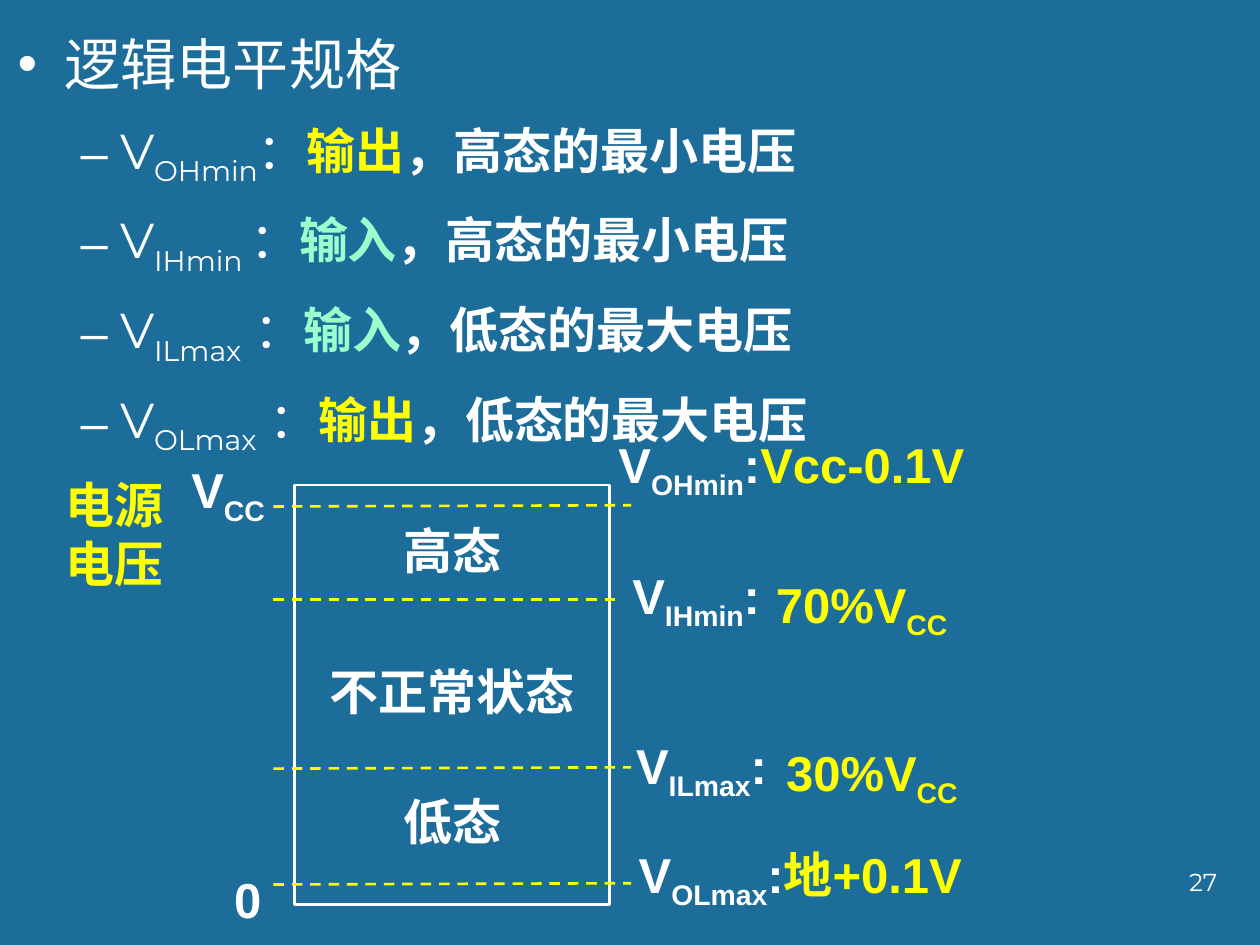
from typing import NamedTuple

from lxml.etree import SubElement
from pptx import Presentation
from pptx.dml.color import RGBColor
from pptx.enum.dml import MSO_LINE_DASH_STYLE as Dash
from pptx.enum.shapes import MSO_CONNECTOR as Connector, MSO_SHAPE as Shape
from pptx.enum.text import MSO_ANCHOR as Anchor, MSO_AUTO_SIZE as AutoSize, PP_ALIGN as Align
from pptx.oxml.ns import qn
from pptx.util import Inches, Pt

COLORS = {"blue": "1C6D9A", "white": "FFFFFF", "yellow": "FFFF00", "mint": "99FFCC"}
CJK_FONT = "Noto Sans CJK SC"


class Piece(NamedTuple):
    text: str
    color: str = "white"
    subscript: bool = False


class Level(NamedTuple):
    symbol: str
    colon: str
    direction: str
    color: str
    meaning: str


class Label(NamedTuple):
    left: float
    top: float
    width: float
    pieces: list[Piece]


class Threshold(NamedTuple):
    start_y: float
    end_x: float
    end_y: float


LEVELS = [
    Level("OHmin", "：", "输出", "yellow", "，高态的最小电压"),
    Level("IHmin ", "：", "输入", "mint", "，高态的最小电压"),
    Level("ILmax", " ：", "输入", "mint", "，低态的最大电压"),
    Level("OLmax", " ：", "输出", "yellow", "，低态的最大电压"),
]


def voltage(symbol: str, color: str = "white", prefix: str = "V") -> list[Piece]:
    return [Piece(prefix, color), Piece(symbol, color, True)]


LABELS = [
    Label(1.42, 3.6, 1.17, voltage("CC")),
    Label(1.76, 6.85, 0.5, [Piece("0")]),
    Label(4.81, 3.4, 3.78, voltage("OHmin") + [Piece(":"), Piece("Vcc-0.1V", "yellow")]),
    Label(4.92, 4.44, 1.32, voltage("IHmin") + [Piece(":")]),
    Label(6.06, 4.51, 2.33, voltage("CC", "yellow", "70%V")),
    Label(4.95, 5.79, 1.35, voltage("ILmax") + [Piece(":")]),
    Label(6.14, 5.84, 2.42, voltage("CC", "yellow", "30%V")),
    Label(4.97, 6.65, 3.21, voltage("OLmax") + [Piece(":"), Piece("地+0.1V", "yellow")]),
]

THRESHOLDS = [
    Threshold(4.02, 5.01, 4.01),
    Threshold(4.76, 4.92, 4.76),
    Threshold(6.1, 5.01, 6.09),
    Threshold(7.02, 5.01, 7.01),
]


def rgb(name: str) -> RGBColor:
    return RGBColor.from_string(COLORS[name])


def add_run(paragraph, piece: Piece, font: str, size: int = 28, bold: bool = True) -> None:
    run = paragraph.add_run()
    run.text = piece.text
    run.font.size = Pt(size)
    run.font.name = font
    run.font.bold = bold
    run.font.color.rgb = rgb(piece.color)
    properties = run.font._element
    SubElement(properties, qn("a:ea")).set("typeface", CJK_FONT)
    if piece.subscript:
        properties.set("baseline", "-25000")


def add_text_frame(slide, left: float, top: float, width: float, height: float):
    box = slide.shapes.add_textbox(Inches(left), Inches(top), Inches(width), Inches(height))
    box.text_frame.word_wrap = True
    return box.text_frame


def fill_body(slide) -> None:
    body = slide.placeholders[1]
    body.left, body.top = Inches(0.04), Inches(0.08)
    body.width, body.height = Inches(9), Inches(5.83)
    frame = body.text_frame
    frame.auto_size = AutoSize.NONE
    frame.vertical_anchor = Anchor.TOP
    heading = frame.paragraphs[0]
    heading.line_spacing = 1.2
    heading.space_before = Pt(0)
    add_run(heading, Piece("逻辑电平规格"), CJK_FONT, 32, False)
    for level in LEVELS:
        item = frame.add_paragraph()
        item.level = 1
        item.line_spacing = 1.2
        item.space_before = Pt(5.5)
        for piece in voltage(level.symbol) + [Piece(level.colon)]:
            add_run(item, piece, "Montserrat", bold=False)
        for piece in (Piece(level.direction, level.color), Piece(level.meaning)):
            add_run(item, piece, "Montserrat")


def add_state_column(slide) -> None:
    column = slide.shapes.add_shape(
        Shape.RECTANGLE, Inches(2.34), Inches(3.85), Inches(2.5), Inches(3.33))
    column.shadow.inherit = False
    column.fill.background()
    column.line.color.rgb = rgb("white")
    column.line.width = Pt(1.5)
    frame = column.text_frame
    frame.word_wrap = False
    frame.vertical_anchor = Anchor.TOP
    states = [("高态", 1.5, 0), ("不正常状态", 1.1, 43.5), ("低态", 1.1, 37.5)]
    for index, (state, spacing, gap) in enumerate(states):
        paragraph = frame.add_paragraph() if index else frame.paragraphs[0]
        paragraph.alignment = Align.CENTER
        paragraph.line_spacing = spacing
        paragraph.space_before = Pt(gap)
        add_run(paragraph, Piece(state), "Times New Roman")


def add_threshold(slide, threshold: Threshold) -> None:
    line = slide.shapes.add_connector(
        Connector.STRAIGHT, Inches(2.17), Inches(threshold.start_y),
        Inches(threshold.end_x), Inches(threshold.end_y))
    line.line.color.rgb = rgb("yellow")
    line.line.width = Pt(1.5)
    line.line.dash_style = Dash.DASH
    SubElement(line._element.spPr, qn("a:effectLst"))


def add_label(slide, label: Label) -> None:
    frame = add_text_frame(slide, label.left, label.top, label.width, 0.57)
    for piece in label.pieces:
        add_run(frame.paragraphs[0], piece, "Arial")


def add_supply_caption(slide) -> None:
    frame = add_text_frame(slide, 0.42, 3.72, 0.99, 1.04)
    frame.word_wrap = False
    for index, text in enumerate(("电源", "电压")):
        paragraph = frame.add_paragraph() if index else frame.paragraphs[0]
        add_run(paragraph, Piece(text, "yellow"), "Times New Roman")


def add_page_number(slide) -> None:
    paragraph = add_text_frame(slide, 7.68, 6.83, 2.08, 0.5).paragraphs[0]
    paragraph.alignment = Align.RIGHT
    add_run(paragraph, Piece("27"), "Montserrat", 14, False)


def main() -> None:
    deck = Presentation()
    deck.slide_width, deck.slide_height = Inches(10), Inches(7.5)
    slide = deck.slides.add_slide(deck.slide_layouts[1])
    slide.background.fill.solid()
    slide.background.fill.fore_color.rgb = rgb("blue")
    title = slide.shapes.title._element
    title.getparent().remove(title)

    fill_body(slide)
    add_state_column(slide)
    for threshold in THRESHOLDS:
        add_threshold(slide, threshold)
    for label in LABELS:
        add_label(slide, label)
    add_page_number(slide)
    add_supply_caption(slide)
    deck.save("out.pptx")


if __name__ == "__main__":
    main()
